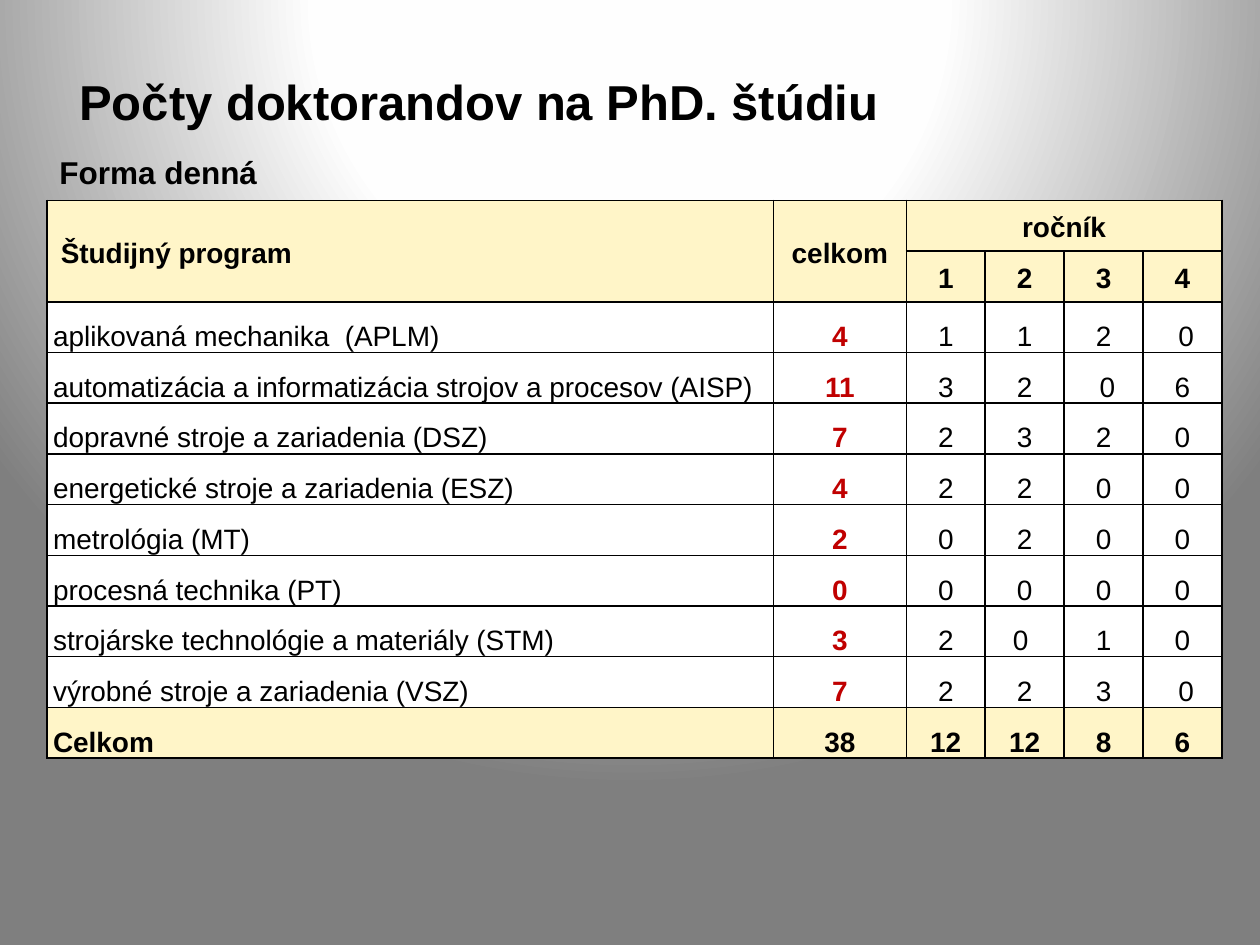
import lxml.etree
import pptx
import pptx.dml.color
import pptx.enum.text
import pptx.oxml
import pptx.oxml.ns
import pptx.util

Cm = pptx.util.Cm
Pt = pptx.util.Pt
RGBColor = pptx.dml.color.RGBColor
ANCHOR = pptx.enum.text.MSO_ANCHOR
ALIGN = pptx.enum.text.PP_ALIGN

BLACK = RGBColor(0x00, 0x00, 0x00)
WHITE = RGBColor(0xFF, 0xFF, 0xFF)
CREAM = RGBColor(0xFF, 0xF5, 0xC8)
RED = RGBColor(0xC0, 0x00, 0x00)
SOFT = RGBColor(0xFE, 0xFE, 0xFE)
GREY = RGBColor(0x7F, 0x7F, 0x7F)

WIDTHS = [14.64, 2.68] + [1.59] * 4
HEAD = [
    [" Študijný program", "celkom", "ročník", "", "", ""],
    ["", "", "1", "2", "3", "4"],
]
BODY = [
    ["aplikovaná mechanika  (APLM)", "4", "1", "1", "2", " 0"],
    ["automatizácia a informatizácia strojov a procesov (AISP)", "11", "3", "2", " 0", "6"],
    ["dopravné stroje a zariadenia (DSZ)", "7", "2", "3", "2", "0"],
    ["energetické stroje a zariadenia (ESZ)", "4", "2", "2", "0", "0"],
    ["metrológia (MT)", "2", "0", "2", "0", "0"],
    ["procesná technika (PT)", "0", "0", "0", "0", "0"],
    ["strojárske technológie a materiály (STM)", "3", "2", "0 ", "1", "0"],
    ["výrobné stroje a zariadenia (VSZ)", "7", "2", "2", "3", " 0"],
]
TOTAL = ["Celkom", "38", "12", "12", "8", "6"]


def paint_back(slide):
    """Fill the background with a round gradient centred above the slide."""
    fill = slide.background.fill
    fill.solid()
    stops = "".join(
        f'<a:gs pos="{pos * 1000}"><a:srgbClr val="{color}"/></a:gs>'
        for pos, color in [(0, WHITE), (40, SOFT), (100, GREY)])
    grad = pptx.oxml.parse_xml(
        f'<a:gradFill {pptx.oxml.ns.nsdecls("a")} rotWithShape="1">'
        f'<a:gsLst>{stops}</a:gsLst><a:path path="circle">'
        '<a:fillToRect l="50000" t="-80000" r="50000" b="180000"/>'
        '</a:path></a:gradFill>')
    old = slide.background._cSld.find(".//" + pptx.oxml.ns.qn("a:solidFill"))
    old.getparent().replace(old, grad)


def set_font(para, size, bold=True, color=BLACK):
    para.font.name = "Arial"
    para.font.size = Pt(size)
    para.font.bold = bold
    para.font.color.rgb = color


def add_text(slide, box, text, size, inset=0.25):
    frame = slide.shapes.add_textbox(*map(Cm, box)).text_frame
    frame.word_wrap = True
    frame.margin_left = Cm(inset)
    frame.vertical_anchor = ANCHOR.MIDDLE
    frame.text = text
    set_font(frame.paragraphs[0], size)


def add_lines(cell):
    """Draw a thin black line on each side of the cell."""
    props = cell._tc.get_or_add_tcPr()
    for spot, side in enumerate("LRTB"):
        props.insert(spot, pptx.oxml.parse_xml(
            f'<a:ln{side} {pptx.oxml.ns.nsdecls("a")} w="{Pt(1)}"><a:solidFill>'
            f'<a:srgbClr val="{BLACK}"/></a:solidFill></a:ln{side}>'))


def fill_cell(cell, text, first, head, bold, color, fill):
    cell.fill.solid()
    cell.fill.fore_color.rgb = fill
    cell.margin_left = cell.margin_right = Cm(0.12)
    cell.margin_top = cell.margin_bottom = 0
    cell.vertical_anchor = ANCHOR.MIDDLE if head else ANCHOR.BOTTOM
    add_lines(cell)
    cell.text = text
    para = cell.text_frame.paragraphs[0]
    para.alignment = ALIGN.LEFT if first else ALIGN.CENTER
    para.line_spacing = 1.15
    para.space_after = Pt(10)
    set_font(para, 16, bold, color)


def add_counts(slide, box):
    rows = HEAD + BODY + [TOTAL]
    table = slide.shapes.add_table(len(rows), len(WIDTHS), *map(Cm, box)).table
    for col, width in zip(table.columns, WIDTHS):
        col.width = Cm(width)
    for row in table.rows:
        row.height = Cm(box[3] / len(rows))
    for r, row in enumerate(rows):
        plain = row in BODY
        for c, text in enumerate(row):
            fill_cell(table.cell(r, c), text, first=c == 0, head=row in HEAD,
                      bold=not plain or c == 1,
                      color=RED if plain and c == 1 else BLACK,
                      fill=WHITE if plain else CREAM)
    for start, end in [((0, 0), (1, 0)), ((0, 1), (1, 1)), ((0, 2), (0, 5))]:
        table.cell(*start).merge(table.cell(*end))


def main():
    deck = pptx.Presentation()
    deck.slide_width, deck.slide_height = Cm(25.4), Cm(19.05)
    slide = deck.slides.add_slide(deck.slide_layouts[6])
    paint_back(slide)
    add_text(slide, (1.6, 0.77, 22.53, 2.52), "Počty doktorandov na PhD. štúdiu", 28, inset=0)
    add_counts(slide, (0.95, 4.04, sum(WIDTHS), 11.25))
    add_text(slide, (0.95, 2.96, 12.7, 1.02), "Forma denná", 18)
    deck.save("out.pptx")


if __name__ == "__main__":
    main()
